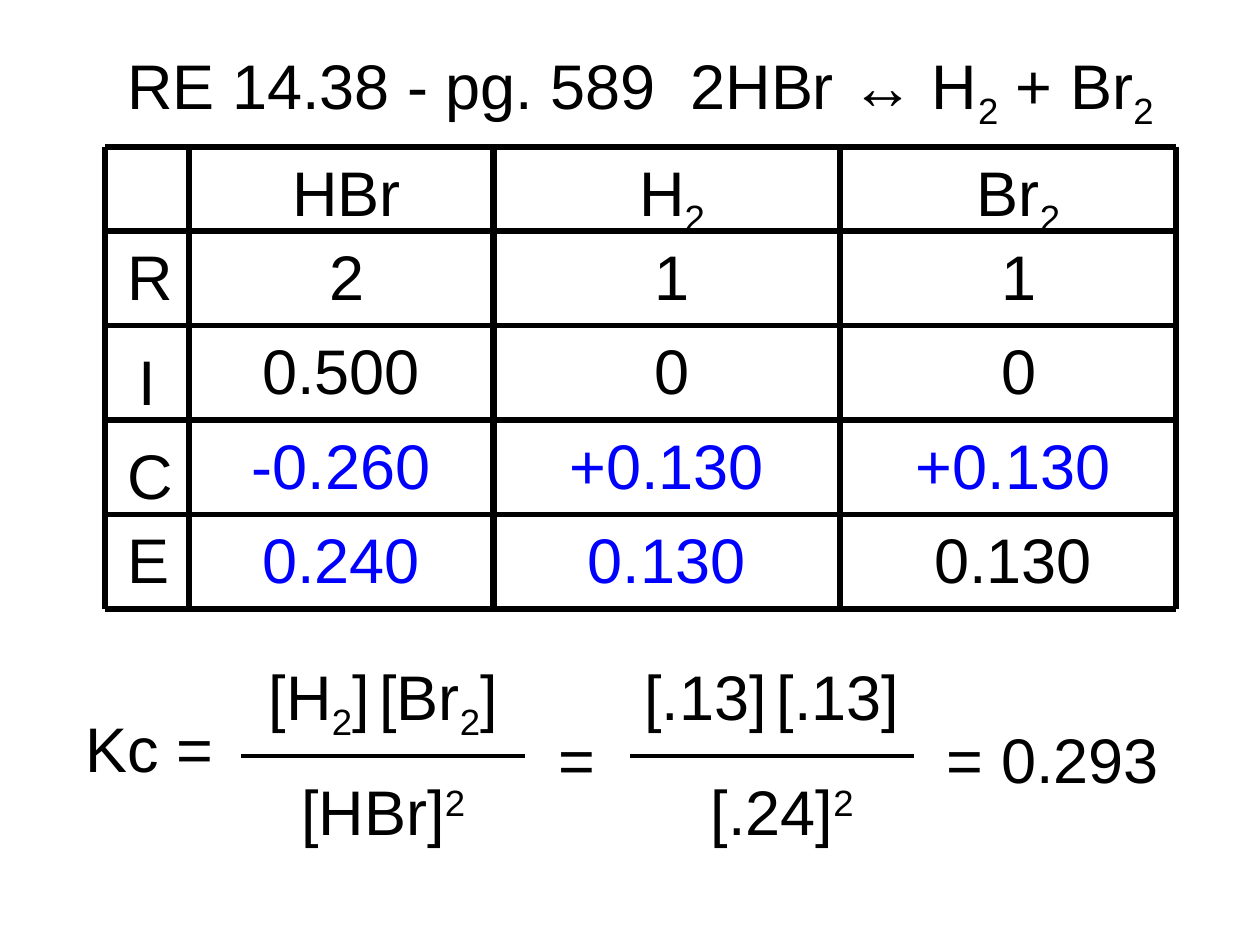
import itertools

import pptx
import pptx.dml.color
import pptx.enum.shapes
import pptx.enum.text
import pptx.oxml
import pptx.oxml.ns
import pptx.util

BLACK = pptx.dml.color.RGBColor(0, 0, 0)
BLUE = pptx.dml.color.RGBColor(0, 0, 255)
CENTER = pptx.enum.text.PP_ALIGN.CENTER
LEFT = pptx.enum.text.PP_ALIGN.LEFT
TOP = pptx.enum.text.MSO_ANCHOR.TOP
MIDDLE = pptx.enum.text.MSO_ANCHOR.MIDDLE
SUB, SUPER = -25000, 30000
WIDTH, HEIGHT = pptx.util.Inches(10), pptx.util.Inches(7.5)
GRID_COLUMNS = 120

COLUMN_EDGES = list(itertools.accumulate((8, 29, 33, 32), initial=10))
ROW_EDGES = list(itertools.accumulate((8, 9, 9, 9, 9), initial=14))
THICK_EDGE = COLUMN_EDGES[2]
VALUE_CENTERS = (33, 64, 97)
VALUE_ROWS = (
    ("HBr", "H|2", "Br|2"),
    ("2", "1", "1"),
    ("0.500", "0", "0"),
    ("-0.260", "+0.130", "+0.130"),
    ("0.240", "0.130", "0.130"),
)
BLUE_VALUES = {(3, 0), (3, 1), (3, 2), (4, 0), (4, 1)}
ROW_LETTERS = {"R": 22, "I": 32, "C": 41, "E": 49}


def grid(steps):
    """Turn grid steps into a length on the slide."""
    return round(WIDTH * steps / GRID_COLUMNS)


def write(frame, text, color=BLACK, align=CENTER, script=SUB):
    """Write text whose every second part, split at bars, is raised or lowered."""
    paragraph = frame.paragraphs[0]
    paragraph.alignment = align
    for index, part in enumerate(text.split("|")):
        for piece in part.partition("] ")if "] [" in part else (part,):
            for words, size in ((piece.rstrip(), 36), (" ", 20)) if piece == "] " else ((piece, 36),):
                if not words:
                    continue
                run = paragraph.add_run()
                run.text = words
                run.font.name = "Arial"
                run.font.size = pptx.util.Pt(size)
                run.font.color.rgb = color
                if index % 2:
                    run.font._element.set("baseline", str(script))


def add_label(slide, left, top, width, text, height=8.4, inset=0.05,
              anchor=TOP, **text_format):
    """Add a text box placed in grid steps."""
    box = slide.shapes.add_textbox(grid(left), grid(top), grid(width), grid(height))
    frame = box.text_frame
    frame.word_wrap = True
    frame.vertical_anchor = anchor
    frame.margin_top = frame.margin_bottom = pptx.util.Inches(inset)
    write(frame, text, **text_format)


def add_rule(slide, start, end, points):
    """Add a straight black line between two grid points."""
    rule = slide.shapes.add_connector(
        pptx.enum.shapes.MSO_CONNECTOR.STRAIGHT, *map(grid, start + end))
    rule.line.color.rgb = BLACK
    rule.line.width = pptx.util.Pt(points)
    rule._element.spPr.append(pptx.oxml.parse_xml(
        f'<a:effectLst {pptx.oxml.ns.nsdecls("a")}/>'))


def add_ice_grid(slide):
    """Rule the grid and fill in its row letters and values."""
    for x in COLUMN_EDGES:
        points = 4.5 if x == THICK_EDGE else 3
        add_rule(slide, (x, ROW_EDGES[0]), (x, ROW_EDGES[-1]), points)
    for y in ROW_EDGES:
        add_rule(slide, (COLUMN_EDGES[0], y), (COLUMN_EDGES[-1], y), 3)
    for letter, top in ROW_LETTERS.items():
        add_label(slide, 11, top, 6, letter)
    for row, (top, values) in enumerate(zip(ROW_EDGES, VALUE_ROWS)):
        for column, (center, value) in enumerate(zip(VALUE_CENTERS, values)):
            width = 23 if "." in value else 16
            color = BLUE if (row, column) in BLUE_VALUES else BLACK
            add_label(slide, center - (width + 1) // 2, top, width, value,
                      color=color)


def add_fraction(slide, left, numerator, denominator, indent):
    """Add a fraction with its bar, starting at a grid column."""
    add_rule(slide, (left, 72), (left + 27, 72), 2.75)
    add_label(slide, left, 62, 27, numerator)
    add_label(slide, left + indent, 73, 23, denominator, script=SUPER)


def main():
    """Build the equilibrium slide."""
    deck = pptx.Presentation()
    deck.slide_width, deck.slide_height = WIDTH, HEIGHT
    slide = deck.slides.add_slide(deck.slide_layouts[6])
    add_label(slide, 10, 5, 102, "RE 14.38 - pg. 589  2HBr ↔ H|2| + Br|2",
              height=7, inset=0, anchor=MIDDLE)
    add_ice_grid(slide)
    add_label(slide, 7, 67, 16, "Kc =", align=LEFT)
    add_fraction(slide, 23, "[H|2|] [Br|2|]", "[HBr]|2", indent=2)
    add_label(slide, 52, 68, 6, "=", align=LEFT)
    add_fraction(slide, 60, "[.13] [.13]", "[.24]|2", indent=3)
    add_label(slide, 89, 68, 24, "= 0.293", align=LEFT)
    deck.save("out.pptx")


if __name__ == "__main__":
    main()
